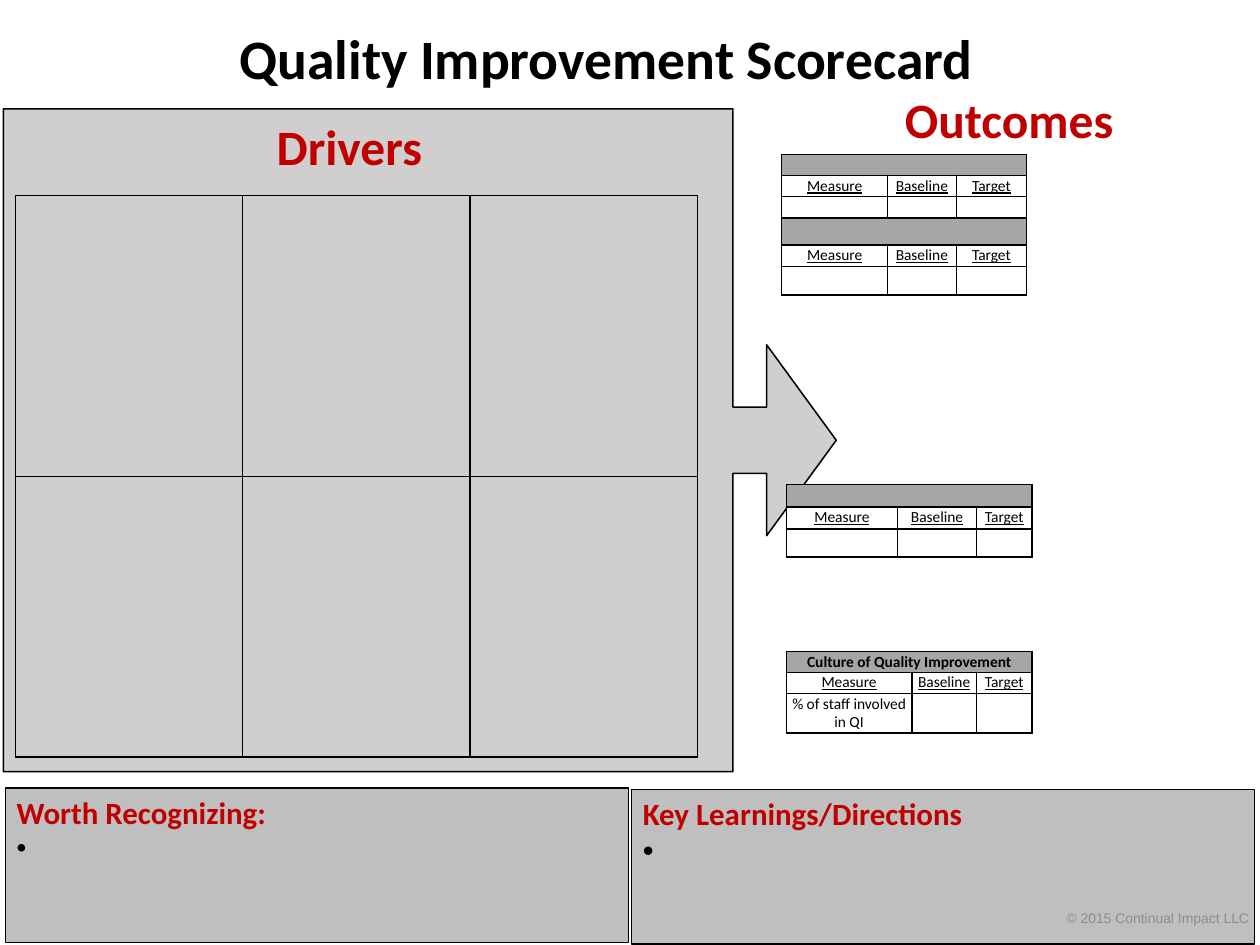
from lxml.etree import SubElement
from pptx import Presentation
from pptx.dml.color import RGBColor
from pptx.enum.shapes import MSO_SHAPE
from pptx.enum.text import MSO_ANCHOR, MSO_AUTO_SIZE, PP_ALIGN
from pptx.oxml.ns import qn
from pptx.util import Inches, Pt

COLORS = {name: RGBColor.from_string(value) for name, value in {
    "ink": "000000", "accent": "C00000", "panel": "D0CECE", "box": "BFBFBF",
    "banner": "A6A6A6", "paper": "FFFFFF", "credit": "8C8C8C"}.items()}

scorecard = Presentation()
scorecard.slide_width, scorecard.slide_height = Inches(11.33), Inches(8.5)
slide = scorecard.slides.add_slide(scorecard.slide_layouts[3])
across = scorecard.slide_width / 100
down = scorecard.slide_height / 100


def area(left, top, width, height):
    """Turn percentages of the slide into lengths."""
    return [round(share * unit) for share, unit in
            zip((left, top, width, height), (across, down, across, down))]


def format_cell(cell, fill=None):
    """Give a cell thin black borders, narrow margins and a fill."""
    properties = cell._tc.get_or_add_tcPr()
    for side in ("lnL", "lnR", "lnT", "lnB"):
        border = SubElement(properties, qn(f"a:{side}"), w=str(Pt(1)))
        SubElement(SubElement(border, qn("a:solidFill")), qn("a:srgbClr"),
                   val=str(COLORS["ink"]))
    if fill:
        cell.fill.solid()
        cell.fill.fore_color.rgb = COLORS[fill]
    else:
        cell.fill.background()
    cell.margin_left = cell.margin_right = Inches(0.02)
    cell.margin_top = cell.margin_bottom = Inches(0.01)


# Title
title = slide.shapes.title
title.left, title.top, title.width, title.height = area(1.24, 1.88, 93.73, 8.35)
title.text_frame.auto_size = MSO_AUTO_SIZE.NONE
title.text_frame.text = "Quality Improvement Scorecard"
heading = title.text_frame.paragraphs[0].runs[0].font
for key, value in {"name": "Calibri", "size": Pt(36), "bold": True}.items():
    setattr(heading, key, value)
heading.color.rgb = COLORS["ink"]

# Drivers panel pointing at the outcomes
drivers_panel = slide.shapes.add_shape(
    MSO_SHAPE.RIGHT_ARROW_CALLOUT, *area(0.26, 11.53, 66.11, 70.12))
for position, share in enumerate((0.1, 0.144, 0.105, 0.876)):
    drivers_panel.adjustments[position] = share
drivers_panel.shadow.inherit = False
drivers_panel.fill.solid()
drivers_panel.fill.fore_color.rgb = COLORS["panel"]
drivers_panel.line.color.rgb = COLORS["ink"]
drivers_panel.line.width = Pt(1)

# Drivers grid
drivers = slide.shapes.add_table(2, 3, *area(1.24, 20.71, 54.1, 59.41)).table
drivers.first_row = drivers.horz_banding = False
for driver in drivers.iter_cells():
    format_cell(driver)

# Section labels and copyright line
for text, place, align, anchor, color, style in (
        ("Drivers", (21.09, 11.76, 17.39, 7.53), PP_ALIGN.LEFT, MSO_ANCHOR.TOP,
         "accent", {"name": "Calibri", "size": Pt(32), "bold": True}),
        ("Outcomes", (67.26, 8.82, 25.68, 7.53), PP_ALIGN.CENTER, MSO_ANCHOR.TOP,
         "accent", {"name": "Calibri", "size": Pt(32), "bold": True}),
        ("© 2015 Continual Impact LLC", (66.37, 94.47, 33.63, 5.29), PP_ALIGN.RIGHT,
         MSO_ANCHOR.MIDDLE, "credit", {"name": "Arial", "size": Pt(9)})):
    label = slide.shapes.add_textbox(*area(*place)).text_frame
    label.word_wrap = True
    label.vertical_anchor = anchor
    label.text = text
    label.paragraphs[0].alignment = align
    lettering = label.paragraphs[0].runs[0].font
    for key, value in style.items():
        setattr(lettering, key, value)
    lettering.color.rgb = COLORS[color]

# Recognition and learning lists
for placeholder, text, place, bullet_size, indent in (
        (slide.placeholders[1], "Worth Recognizing:", (0.44, 83.41, 49.43, 16.35), 18, 0.31),
        (slide.placeholders[2], "Key Learnings/Directions", (50.13, 83.53, 49.43, 16.35), 20, 0.38)):
    (placeholder.left, placeholder.top,
     placeholder.width, placeholder.height) = area(*place)
    placeholder.fill.solid()
    placeholder.fill.fore_color.rgb = COLORS["box"]
    placeholder.line.color.rgb = COLORS["ink"]
    placeholder.line.width = Pt(1)
    notes = placeholder.text_frame
    notes.auto_size = MSO_AUTO_SIZE.NONE
    notes.vertical_anchor = MSO_ANCHOR.TOP
    for entry, words, size, color, hang in (
            (notes.paragraphs[0], text, 20, "accent", 0),
            (notes.add_paragraph(), " ", bullet_size, "ink", indent)):
        entry.space_before = Pt(0)
        layout = entry._p.get_or_add_pPr()
        layout.set("marL", str(Inches(hang)))
        layout.set("indent", str(-Inches(hang)))
        if hang:
            SubElement(layout, qn("a:buFont"), typeface="Arial")
            SubElement(layout, qn("a:buChar"), char="•")
        else:
            SubElement(layout, qn("a:buNone"))
        run = entry.add_run()
        run.text = words
        for key, value in {"name": "Calibri", "size": Pt(size), "bold": not hang}.items():
            setattr(run.font, key, value)
        run.font.color.rgb = COLORS[color]

# Outcome tables: a row with one text is a banner across all columns
HEADS = ("Measure", "Baseline", "Target")
BLANK = ("", "", "")
for left, top, columns, rows in (
        (62.4, 51.29, (8.83, 6.27, 4.41),
         ((2.35, ("",)), (2.35, HEADS), (2.94, BLANK))),
        (62.05, 16.35, (8.38, 5.47, 5.56),
         ((2.24, ("",)), (2.24, HEADS), (2.24, BLANK),
          (2.88, ("",)), (2.24, HEADS), (3.06, BLANK))),
        (62.4, 68.94, (9.97, 5.12, 4.41),
         ((2.18, ("Culture of Quality Improvement",)), (2.24, HEADS),
          (4.18, ("% of staff involved in QI", "", ""))))):
    outcome = slide.shapes.add_table(
        len(rows), len(columns),
        *area(left, top, sum(columns), sum(height for height, _ in rows))).table
    outcome.first_row = outcome.horz_banding = False
    for column, width in zip(outcome.columns, columns):
        column.width = round(width * across)
    for row_number, (height, texts) in enumerate(rows):
        outcome.rows[row_number].height = round(height * down)
        banner = len(texts) == 1
        if banner:
            outcome.cell(row_number, 0).merge(outcome.cell(row_number, 2))
        for column_number in range(len(columns)):
            cell = outcome.cell(row_number, column_number)
            format_cell(cell, "banner" if banner else "paper")
            text = texts[column_number] if column_number < len(texts) else ""
            entry = cell.text_frame.paragraphs[0]
            if not text:
                SubElement(entry._p, qn("a:endParaRPr"), sz="1000")
                continue
            entry.alignment = PP_ALIGN.CENTER
            run = entry.add_run()
            run.text = text
            for key, value in {"name": "Calibri", "size": Pt(10), "bold": banner,
                               "underline": texts == HEADS}.items():
                setattr(run.font, key, value)
            run.font.color.rgb = COLORS["ink"]

scorecard.save("out.pptx")
